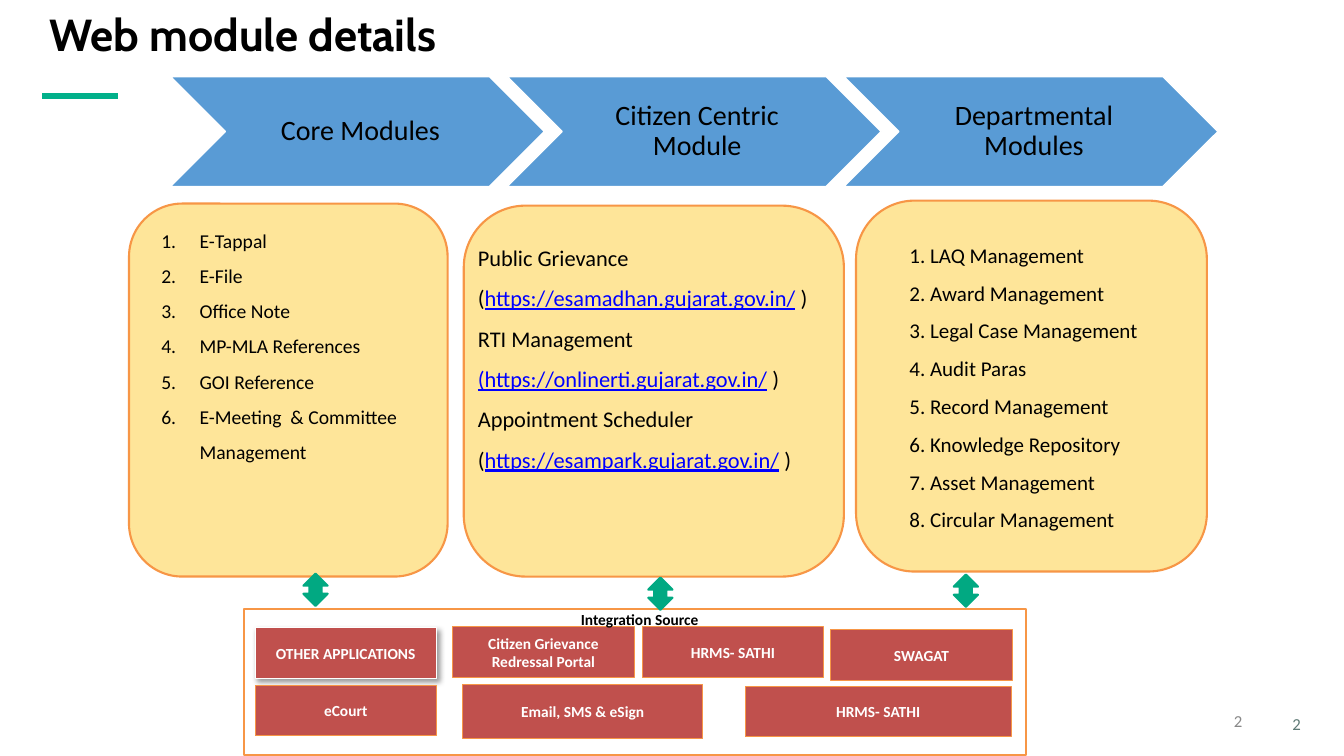
from lxml.etree import SubElement
from pptx import Presentation
from pptx.dml.color import RGBColor
from pptx.enum.shapes import MSO_CONNECTOR, MSO_SHAPE
from pptx.enum.text import MSO_ANCHOR, PP_ALIGN
from pptx.oxml.ns import qn
from pptx.util import Inches, Pt

COLORS = {
    "black": "000000", "white": "FFFFFF", "blue": "599BD5", "link": "0000FF",
    "cream": "FEE599", "orange": "F79646", "red": "C0504D", "rule": "01B08A",
    "green": "01A982", "gray": "888888", "slate": "5F7A76",
}

# Content: a line is a list of (text, is link) pieces or a plain string
STAGES = ["Core Modules", "Citizen Centric Module", "Departmental Modules"]
CORE = ["E-Tappal", "E-File", "Office Note", "MP-MLA References",
        "GOI Reference", "E-Meeting  & Committee Management"]
CITIZEN = [
    "Public Grievance",
    [("(", False), ("https://esamadhan.gujarat.gov.in/", True), (" )", False)],
    "RTI Management",
    [("(https://onlinerti.gujarat.gov.in/", True), (" )", False)],
    "Appointment Scheduler",
    [("(", False), ("https://esampark.gujarat.gov.in/", True), (" )", False)],
]
DEPTS = ["LAQ Management", "Award Management", "Legal Case Management",
         "Audit Paras", "Record Management", "Knowledge Repository",
         "Asset Management", "Circular Management"]
DEPTS = [f"{n}. {name}" for n, name in enumerate(DEPTS, 1)]

# Panel box, text box, lines, text size, automatic numbers
PANELS = [
    ((1.28, 2.02, 3.16, 3.7), (1.1, 2.15, 3.2, 3.2), CORE, 14, True),
    ((4.6, 2.04, 3.77, 3.68), (4.74, 2.29, 3.63, 3.08), CITIZEN, 16, False),
    ((8.49, 1.99, 3.48, 3.68), (9.02, 2.28, 3.04, 2.6), DEPTS, 15, False),
]
ARROWS = [(3.13, 5.85), (6.55, 5.89), (9.58, 5.86)]  # centres
SOURCES = [
    ("OTHER APPLICATIONS", 2.53, 6.23, 1.8, 0.5),
    ("Citizen Grievance Redressal Portal", 4.49, 6.22, 1.8, 0.5),
    ("HRMS- SATHI", 6.37, 6.22, 1.8, 0.5),
    ("SWAGAT", 8.24, 6.25, 1.8, 0.5),
    ("eCourt", 2.53, 6.8, 1.8, 0.5),
    ("Email, SMS & eSign", 4.59, 6.79, 2.38, 0.54),
    ("HRMS- SATHI", 7.39, 6.81, 2.64, 0.5),
]
NUMBERS = [((9.42, 6.95, 3, 0.4), "gray"), ((12.42, 7.06, 0.58, 0.25), "slate")]

prs = Presentation()
prs.slide_width, prs.slide_height = Inches(13.33), Inches(7.5)
slide = prs.slides.add_slide(prs.slide_layouts[6])


def rgb(name):
    return RGBColor.from_string(COLORS[name])


def add_shape(kind, box, fill, line, width):
    shape = slide.shapes.add_shape(kind, *map(Inches, box))
    shape.shadow.inherit = False
    shape.fill.solid()
    shape.fill.fore_color.rgb = rgb(fill)
    shape.line.color.rgb = rgb(line)
    shape.line.width = Pt(width)
    return shape


def add_box(box):
    return slide.shapes.add_textbox(*map(Inches, box))


def write(shape, lines, size, color="black", bold=False, font="Calibri",
          align=PP_ALIGN.LEFT, anchor=MSO_ANCHOR.MIDDLE, space=1.0,
          pad=(0.1, 0.05, 0.1, 0.05)):
    frame = shape.text_frame
    frame.word_wrap = True
    frame.vertical_anchor = anchor
    (frame.margin_left, frame.margin_top,
     frame.margin_right, frame.margin_bottom) = map(Inches, pad)
    for i, line in enumerate(lines):
        para = frame.add_paragraph() if i else frame.paragraphs[0]
        para.alignment = align
        para.line_spacing = space
        for text, link in [(line, False)] if isinstance(line, str) else line:
            run = para.add_run()
            run.text = text
            run.font.name, run.font.size = font, Pt(size)
            run.font.bold = bold
            run.font.underline = link
            run.font.color.rgb = rgb("link" if link else color)


def number(para):
    props = para._p.get_or_add_pPr()
    props.set("marL", str(Inches(0.88)))
    props.set("indent", str(-Inches(0.38)))
    SubElement(props, qn("a:buFont"), typeface="+mj-lt")
    SubElement(props, qn("a:buAutoNum"), type="arabicPeriod")


def cast_shadow(shape):
    effects = shape._element.spPr.find(qn("a:effectLst"))
    outer = SubElement(effects, qn("a:outerShdw"), blurRad=str(Pt(4)),
                       dist=str(Pt(3)), dir="2700000", rotWithShape="0")
    tint = SubElement(outer, qn("a:srgbClr"), val=COLORS["black"])
    SubElement(tint, qn("a:alpha"), val="40000")


# Title, accent rule and page numbers
rule = slide.shapes.add_connector(
    MSO_CONNECTOR.STRAIGHT, *map(Inches, (0.42, 0.95, 1.17, 0.95)))
rule.line.color.rgb = rgb("rule")
rule.line.width = Pt(4.42)
SubElement(rule._element.spPr, qn("a:effectLst"))
write(add_box((0.39, 0.14, 10.95, 0.46)), ["Web module details"], 32,
      bold=True, font="Cabin", space=0.9)
for box, color in NUMBERS:
    write(add_box(box), ["2"], 12, color, align=PP_ALIGN.RIGHT)

# Chevrons
for i, stage in enumerate(STAGES):
    chevron = add_shape(MSO_SHAPE.CHEVRON, (1.69 + 3.34 * i, 0.76, 3.71, 1.09),
                        "blue", "white", 1)
    write(chevron, [stage], 20, align=PP_ALIGN.CENTER, space=0.9,
          pad=(0.09, 0.03, 0.03, 0.03))

# Module panels
for box, inner, lines, size, numbered in PANELS:
    add_shape(MSO_SHAPE.ROUNDED_RECTANGLE, box, "cream", "orange", 1.5)
    area = add_box(inner)
    write(area, lines, size, anchor=MSO_ANCHOR.TOP, space=1.5, pad=(0,) * 4)
    if numbered:
        for para in area.text_frame.paragraphs:
            number(para)

# Integration sources
PAD = (0.13, 0.07, 0.13, 0.07)
add_shape(MSO_SHAPE.RECTANGLE, (2.42, 6.04, 7.76, 1.45), "white", "orange", 1.5)
for i, (name, *box) in enumerate(SOURCES):
    tile = add_shape(MSO_SHAPE.RECTANGLE, box, "red",
                     "orange" if i else "white", 0.75)
    write(tile, [name], 11, "white", True, align=PP_ALIGN.CENTER, pad=PAD)
    if i == 0:
        cast_shadow(tile)
write(add_box((4.86, 5.98, 2.97, 0.32)), ["Integration Source"], 11, bold=True,
      align=PP_ALIGN.CENTER, anchor=MSO_ANCHOR.TOP, pad=PAD)

# Arrows between panels and sources
for x, y in ARROWS:
    add_shape(MSO_SHAPE.UP_DOWN_ARROW, (x - 0.12, y - 0.16, 0.24, 0.32),
              "green", "green", 1.5)

prs.save("out.pptx")
